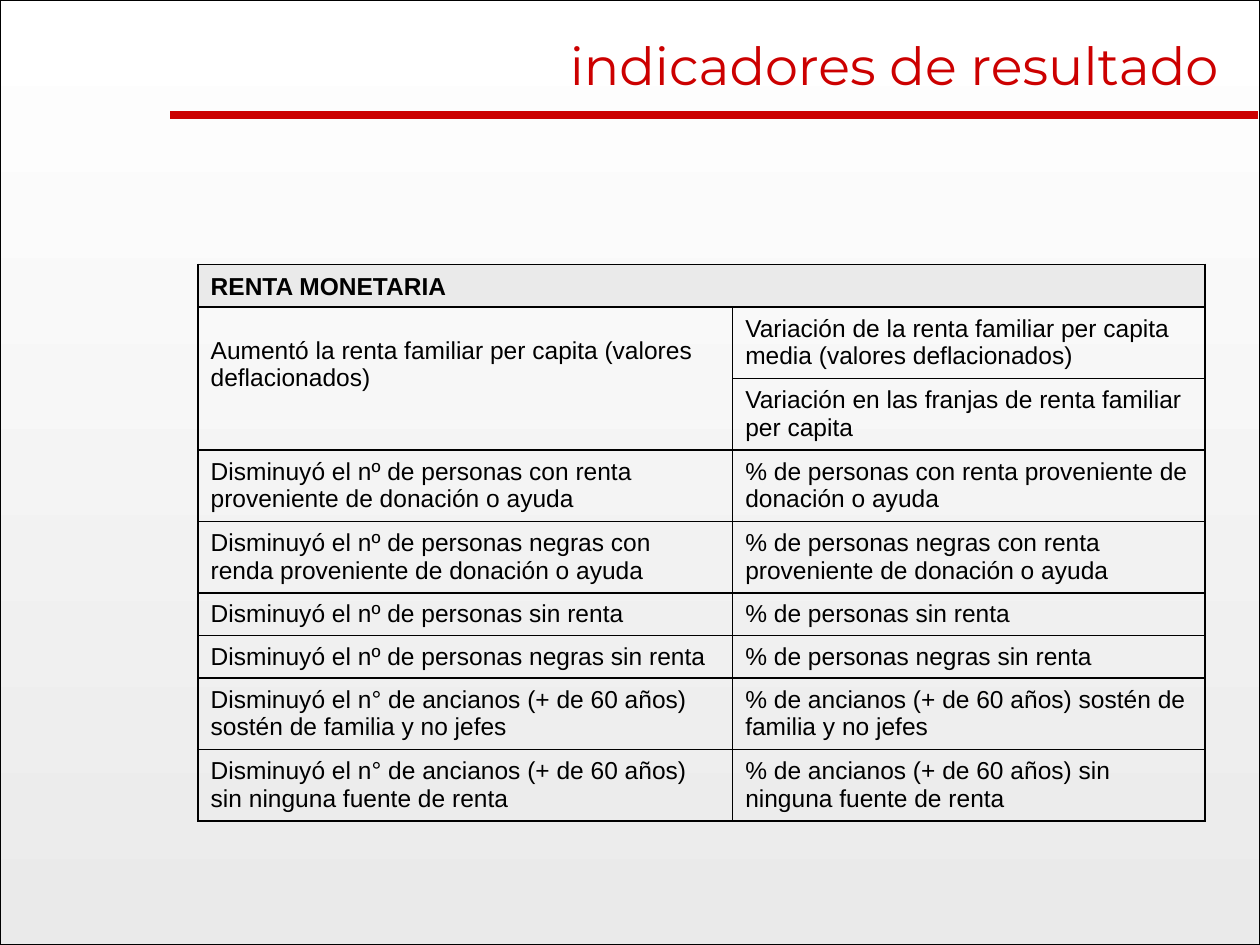
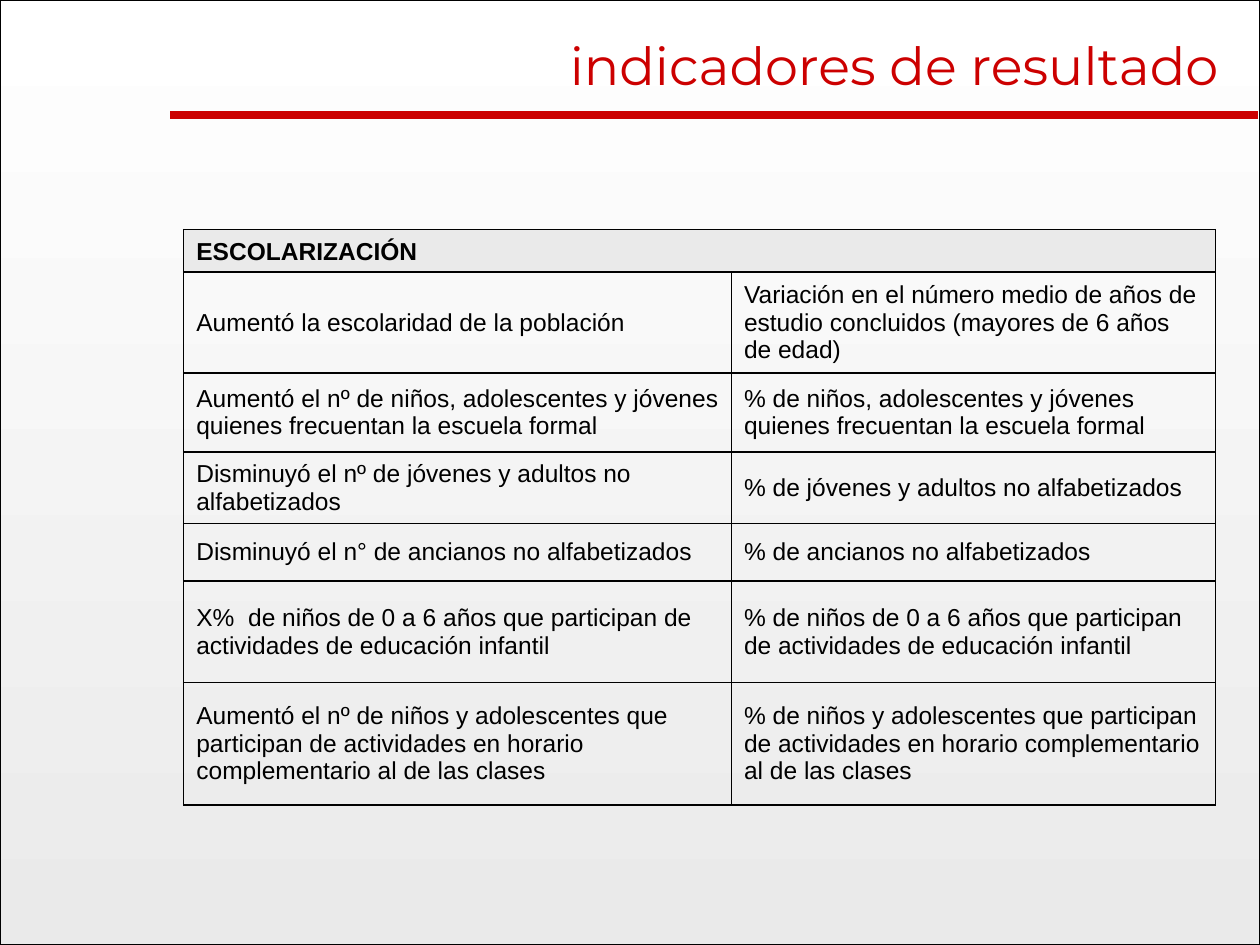
"""Two slides of result indicators, each a bordered table under a red title rule."""
from dataclasses import dataclass

from lxml import etree
from pptx import Presentation
from pptx import util as u
from pptx.dml import color
from pptx.enum import shapes, text
from pptx.oxml import ns

Pt = u.Pt
TITLE = "indicadores de resultado"
TABLES = [
    {
        "heading": "RENTA MONETARIA",
        "left": 113.2, "top": 151, "cols": (305.5, 270),
        "heights": (24.3, 40.9, 40.9, 40.9, 40.9, 24.3, 24.3, 40.9, 40.9),
        "merge": ((1, 0), (2, 0)),
        "rows": [
            ("Aumentó la renta familiar per capita (valores deflacionados)",
             "Variación de la renta familiar per capita media (valores deflacionados)"),
            (None, "Variación en las franjas de renta familiar per capita"),
            ("Disminuyó el nº de personas con renta proveniente de donación o ayuda",
             "% de personas con renta proveniente de donación o ayuda"),
            ("Disminuyó el nº de personas negras con renda proveniente de donación o ayuda",
             "% de personas negras con renta proveniente de donación o ayuda"),
            ("Disminuyó el nº de personas sin renta", "% de personas sin renta"),
            ("Disminuyó el nº de personas negras sin renta", "% de personas negras sin renta"),
            ("Disminuyó el n° de ancianos (+ de 60 años) sostén de familia y no jefes",
             "% de ancianos (+ de 60 años) sostén de familia y no jefes"),
            ("Disminuyó el n° de ancianos (+ de 60 años) sin ninguna fuente de renta",
             "% de ancianos (+ de 60 años) sin ninguna fuente de renta"),
        ],
    },
    {
        "heading": "ESCOLARIZACIÓN",
        "left": 105, "top": 131.2, "cols": (313, 276.5),
        "heights": (24.3, 57.8, 45.1, 40.9, 32.9, 57.8, 70),
        "merge": None,
        "rows": [
            ("Aumentó la escolaridad de la población",
             "Variación en el número medio de años de estudio concluidos (mayores de 6 años de edad)"),
            ("Aumentó el nº de niños, adolescentes y jóvenes quienes frecuentan la escuela formal",
             "% de niños, adolescentes y jóvenes quienes frecuentan la escuela formal"),
            ("Disminuyó el nº de jóvenes y adultos no alfabetizados",
             "% de jóvenes y adultos no alfabetizados"),
            ("Disminuyó el n° de ancianos no alfabetizados", "% de ancianos no alfabetizados"),
            ("X%  de niños de 0 a 6 años que participan de actividades de educación infantil",
             "% de niños de 0 a 6 años que participan de actividades de educación infantil"),
            ("Aumentó el nº de niños y adolescentes que participan de actividades en horario "
             "complementario al de las clases",
             "% de niños y adolescentes que participan de actividades en horario "
             "complementario al de las clases"),
        ],
    },
]


@dataclass(frozen=True)
class Theme:
    red: str = "CC0000"
    black: str = "000000"
    white: str = "FFFFFF"
    grey: str = "EAEAEA"
    title_font: str = "Montserrat"
    body_font: str = "Arial"
    title_size: float = 30
    body_size: float = 14
    width: float = 720
    height: float = 540
    border: float = 1
    merged_bottom: float = 19.7


T = Theme()


def rgb(value):
    return color.RGBColor.from_string(value)


def add_run(p, words, font, size, ink, bold=False):
    r = p.add_run()
    r.text = words
    r.font.name, r.font.size, r.font.bold = font, Pt(size), bold
    r.font.color.rgb = rgb(ink)


def add_frame(s):
    sp = s.shapes.add_shape(shapes.MSO_SHAPE.RECTANGLE, 0, 0, Pt(T.width), Pt(T.height))
    sp.shadow.inherit = False
    sp.fill.gradient()
    sp.fill.gradient_angle = 270
    for stop, tone, place in zip(sp.fill.gradient_stops, (T.white, T.grey), (0, 1)):
        stop.color.rgb = rgb(tone)
        stop.position = place
    sp.line.color.rgb = rgb(T.black)
    sp.line.width = Pt(0.75)

    rule = s.shapes.add_connector(shapes.MSO_CONNECTOR.STRAIGHT,
                                  Pt(97.2), Pt(65.5), Pt(718.6), Pt(65.5))
    rule.line.color.rgb = rgb(T.red)
    rule.line.width = Pt(4.5)
    etree.SubElement(rule._element.spPr, ns.qn("a:effectLst"))


def add_title(s):
    tf = s.shapes.add_textbox(Pt(281), Pt(15.1), Pt(422.6), Pt(43.2)).text_frame
    tf.word_wrap = True
    p = tf.paragraphs[0]
    p.alignment = text.PP_ALIGN.RIGHT
    add_run(p, TITLE, T.title_font, T.title_size, T.red)


def set_borders(cell):
    tc_pr = cell._tc.get_or_add_tcPr()
    for side in ("lnL", "lnR", "lnT", "lnB"):
        ln = etree.SubElement(tc_pr, ns.qn(f"a:{side}"), w=str(Pt(T.border)))
        fill = etree.SubElement(ln, ns.qn("a:solidFill"))
        etree.SubElement(fill, ns.qn("a:srgbClr"), val=T.black)


def add_table(s, data):
    rows = [(data["heading"], None), *data["rows"]]
    table = s.shapes.add_table(len(rows), len(data["cols"]), Pt(data["left"]), Pt(data["top"]),
                               Pt(sum(data["cols"])), Pt(sum(data["heights"]))).table
    table.first_row = table.horz_banding = False
    for col, width in zip(table.columns, data["cols"]):
        col.width = Pt(width)
    for row, height in zip(table.rows, data["heights"]):
        row.height = Pt(height)
    for i, row in enumerate(rows):
        for j, words in enumerate(row):
            cell = table.cell(i, j)
            set_borders(cell)
            if i == 0:
                cell.fill.solid()
                cell.fill.fore_color.rgb = rgb(T.grey)
                cell.vertical_anchor = text.MSO_ANCHOR.BOTTOM
            else:
                cell.fill.background()
                cell.vertical_anchor = text.MSO_ANCHOR.MIDDLE
            if words:
                add_run(cell.text_frame.paragraphs[0], words, T.body_font, T.body_size,
                        T.black, bold=i == 0)
    table.cell(0, 0).merge(table.cell(0, 1))
    if data["merge"]:
        first, last = (table.cell(*place) for place in data["merge"])
        first.merge(last)
        first.margin_bottom = Pt(T.merged_bottom)


def main():
    prs = Presentation()
    prs.slide_width, prs.slide_height = Pt(T.width), Pt(T.height)
    for data in TABLES:
        s = prs.slides.add_slide(prs.slide_layouts[6])
        add_frame(s)
        add_title(s)
        add_table(s, data)
    prs.save("out.pptx")


if __name__ == "__main__":
    main()
